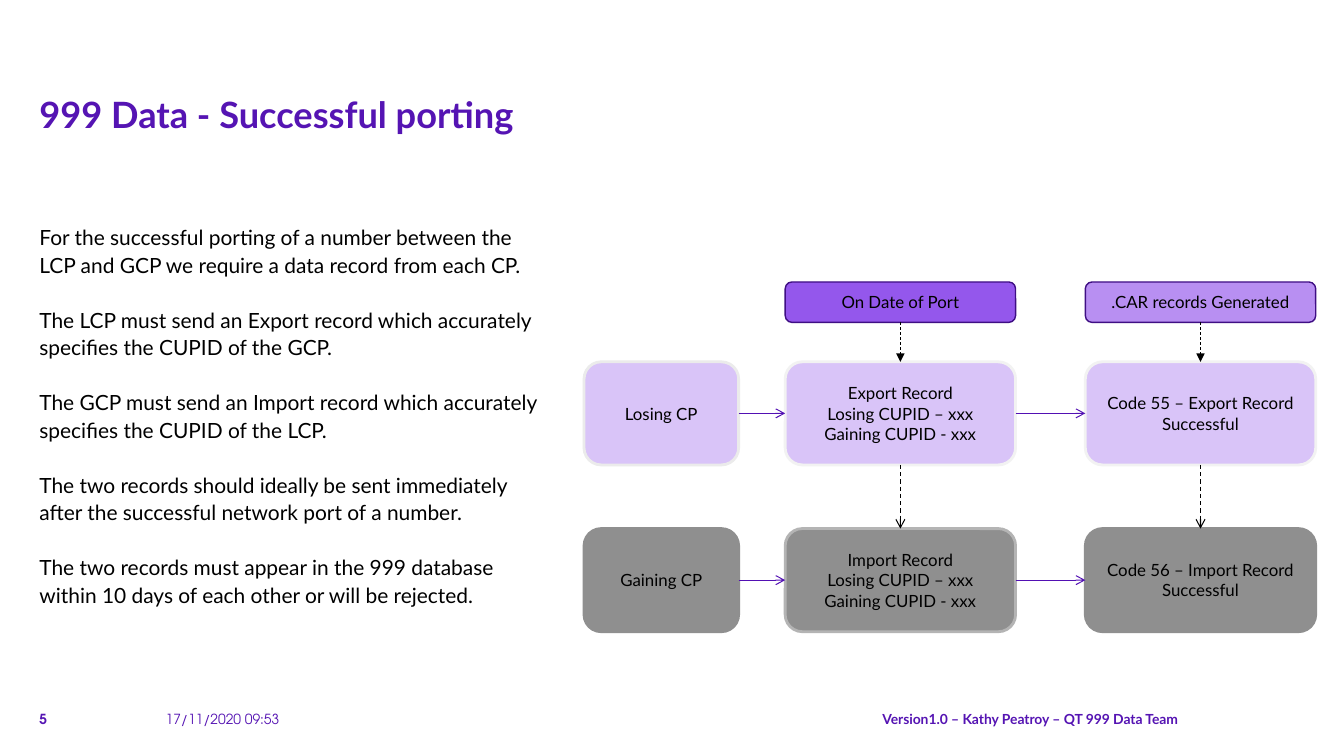
from lxml import etree
from pptx import Presentation
from pptx.dml.color import RGBColor
from pptx.enum.dml import MSO_LINE
from pptx.enum.shapes import MSO_CONNECTOR, MSO_SHAPE
from pptx.enum.text import MSO_ANCHOR, PP_ALIGN
from pptx.oxml.ns import qn
from pptx.util import Inches, Pt

COLOURS = {
    "title": "5514B3",
    "text": "000000",
    "arrow": "5210B3",
    "lilac": "D9C4F8",
    "grey": "8F8F8F",
    "light grey": "B4B4B4",
    "pale": "F2F2F2",
    "losing edge": "EBEBEB",
    "violet": "9457EC",
    "mauve": "B88FF2",
    "header edge": "3F0F84",
}
FONT = "Lato"
FOOTER_FONT = "TeX Gyre Adventor"
TOP, LEFT, BOTTOM, RIGHT = range(4)


def colour(name):
    return RGBColor.from_string(COLOURS[name])


class PortingSlide:
    def __init__(self, deck):
        self.page = deck.slides.add_slide(deck.slide_layouts[5])

    def set_text(self, shape, text, size, ink, font=FONT, bold=False,
                 align=PP_ALIGN.LEFT, anchor=MSO_ANCHOR.TOP, inset=True):
        frame = shape.text_frame
        frame.word_wrap = True
        frame.vertical_anchor = anchor
        if not inset:
            frame.margin_left = frame.margin_right = Inches(0)
            frame.margin_top = frame.margin_bottom = Inches(0)
        frame.text = text
        for para in frame.paragraphs:
            para.alignment = align
            for span in para.runs:
                span.font.name = font
                span.font.size = Pt(size)
                span.font.bold = bold
                span.font.color.rgb = colour(ink)
        return frame

    def title(self, text, left, top, width, height):
        box = self.page.shapes.title
        box.left, box.top = Inches(left), Inches(top)
        box.width, box.height = Inches(width), Inches(height)
        self.set_text(box, text, 25.8, "title", bold=True, inset=False)

    def text(self, text, left, top, width, height, size, ink, **style):
        box = self.page.shapes.add_textbox(
            Inches(left), Inches(top), Inches(width), Inches(height))
        return self.set_text(box, text, size, ink, inset=False, **style)

    def body(self, lines, left, top, width, height):
        frame = self.text("\n".join(lines), left, top, width, height, 14.9, "text")
        for para in frame.paragraphs:
            para.line_spacing = 1.1
            para.space_after = Pt(19.4)

    def footer(self, text, left, width, **style):
        self.text(text, left, 6.91, width, 0.29, 9.9, "title",
                  anchor=MSO_ANCHOR.BOTTOM, **style)

    def box(self, text, left, top, width, height, fill, edge, weight):
        shape = self.page.shapes.add_shape(
            MSO_SHAPE.ROUNDED_RECTANGLE,
            Inches(left), Inches(top), Inches(width), Inches(height))
        shape.shadow.inherit = False
        shape.fill.solid()
        shape.fill.fore_color.rgb = colour(fill)
        shape.line.color.rgb = colour(edge)
        shape.line.width = Pt(weight)
        self.set_text(shape, text, 12, "text", align=PP_ALIGN.CENTER,
                      anchor=MSO_ANCHOR.MIDDLE)
        return shape

    def arrow(self, start, start_side, end, end_side, ink, weight, head, dashed=False):
        line = self.page.shapes.add_connector(MSO_CONNECTOR.STRAIGHT, 0, 0, 0, 0)
        line.begin_connect(start, start_side)
        line.end_connect(end, end_side)
        line.line.color.rgb = colour(ink)
        line.line.width = Pt(weight)
        if dashed:
            line.line.dash_style = MSO_LINE.DASH
        properties = line.element.spPr
        etree.SubElement(properties.find(qn("a:ln")), qn("a:tailEnd"), type=head)
        etree.SubElement(properties, qn("a:effectLst"))


def main():
    deck = Presentation()
    deck.slide_width, deck.slide_height = Inches(13.3), Inches(7.48)
    slide = PortingSlide(deck)

    slide.title("999 Data - Successful porting", 0.39, 0.91, 5.08, 0.87)
    slide.body([
        "For the successful porting of a number between the LCP and GCP "
        "we require a data record from each CP.",
        "The LCP must send an Export record which accurately specifies "
        "the CUPID of the GCP.",
        "The GCP must send an Import record which accurately specifies "
        "the CUPID of the LCP.",
        "The two records should ideally be sent immediately after the "
        "successful network port of a number.",
        "The two records must appear in the 999 database within 10 days "
        "of each other or will be rejected.",
    ], 0.39, 2.2, 5.08, 3.94)

    slide.footer("5", 0.39, 0.39, font=FOOTER_FONT, bold=True)
    slide.footer("17/11/2020 09:53", 1.64, 2.03, font=FOOTER_FONT)
    slide.footer("Version1.0 – Kathy Peatroy – QT 999 Data Team", 3.99, 7.67,
                 bold=True, align=PP_ALIGN.RIGHT)

    columns = [(5.78, 1.53), (7.77, 2.28), (10.74, 2.28)]
    headers = [("On Date of Port", "violet"), (".CAR records Generated", "mauve")]
    rows = [
        (3.58, "lilac", [
            ("Losing CP", "losing edge"),
            ("Export Record\vLosing CUPID – xxx\nGaining CUPID - xxx", "pale"),
            ("Code 55 – Export Record Successful", "pale"),
        ]),
        (5.23, "grey", [
            ("Gaining CP", "grey"),
            ("Import Record\vLosing CUPID – xxx\nGaining CUPID - xxx", "light grey"),
            ("Code 56 – Import Record Successful", "grey"),
        ]),
    ]

    header_boxes = [
        slide.box(text, left, 2.79, width, 0.4, fill, "header edge", 1)
        for (left, width), (text, fill) in zip(columns[1:], headers)
    ]
    record_rows = [
        [slide.box(text, left, top, width, 1.02, fill, edge, 2)
         for (left, width), (text, edge) in zip(columns, cells)]
        for top, fill, cells in rows
    ]

    for boxes in record_rows:
        for start, end in zip(boxes, boxes[1:]):
            slide.arrow(start, RIGHT, end, LEFT, "arrow", 0.75, "arrow")
    exports, imports = record_rows
    for header, upper, lower in zip(header_boxes, exports[1:], imports[1:]):
        slide.arrow(header, BOTTOM, upper, TOP, "text", 0.5, "triangle", dashed=True)
        slide.arrow(upper, BOTTOM, lower, TOP, "text", 0.75, "arrow", dashed=True)

    deck.save("out.pptx")


if __name__ == "__main__":
    main()
